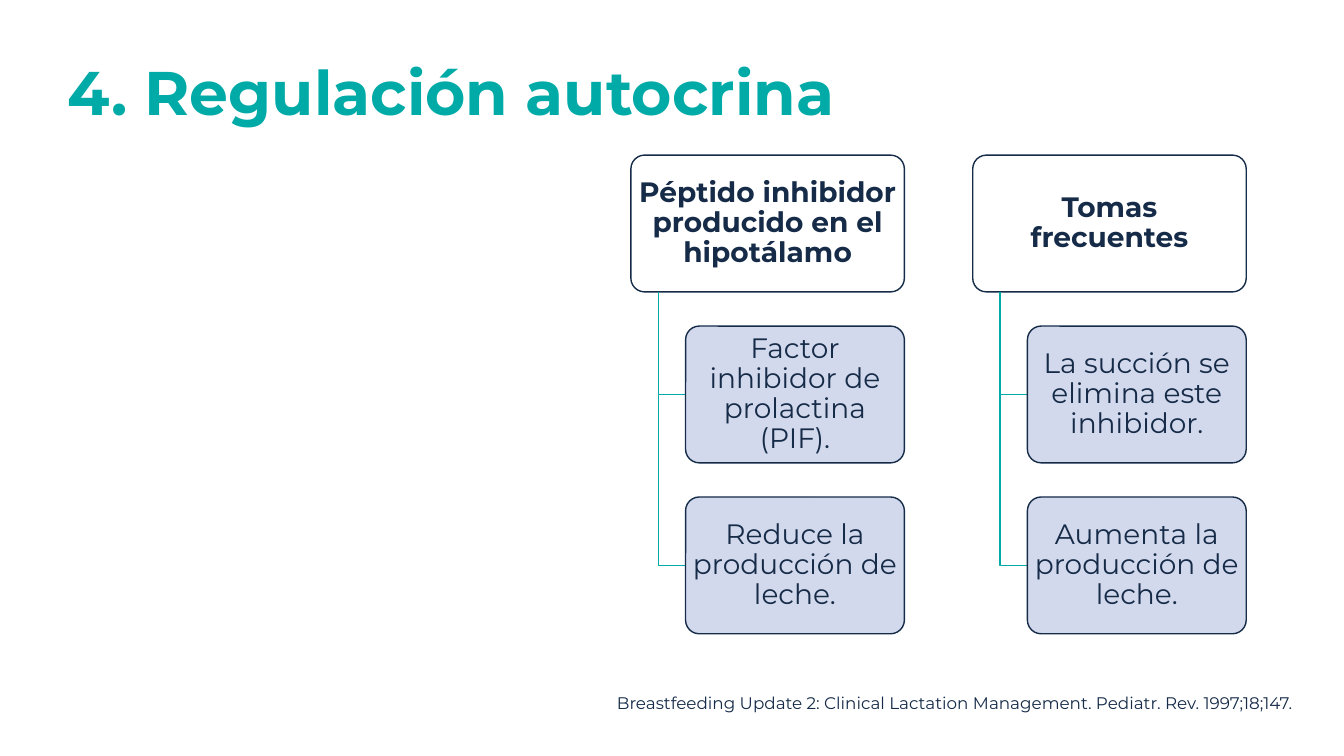
import pptx
import pptx.util
import pptx.dml.color
import pptx.enum.shapes
import pptx.enum.text
import pptx.oxml.ns
import lxml.etree

Cm = pptx.util.Cm
Pt = pptx.util.Pt
ALIGN = pptx.enum.text.PP_ALIGN
ANCHOR = pptx.enum.text.MSO_ANCHOR

TEAL, NAVY, WHITE, LAVENDER = "00AAA7", "152B48", "FFFFFF", "CFD5EA"

# Every length in the diagram is a multiple of the box height (cm).
LEFT, TOP, BOX_H = 15.9, 3.91, 3.446
HEAD_W = 2 * BOX_H
COLUMN_STEP = 2.5 * BOX_H
ROW_STEP = 1.25 * BOX_H
TRUNK_X = 0.2 * BOX_H
CHILD_X = 0.4 * BOX_H

COLUMNS = [
    ("Péptido inhibidor producido en el hipotálamo",
     ["Factor inhibidor de prolactina (PIF).", "Reduce la producción de leche."]),
    ("Tomas frecuentes",
     ["La succión se elimina este inhibidor.", "Aumenta la producción de leche."]),
]


def rgb(value):
    return pptx.dml.color.RGBColor.from_string(value)


def write(tf, text, size=20, color=NAVY, bold=False, align=ALIGN.LEFT,
          anchor=ANCHOR.TOP, spacing=1.0):
    tf.word_wrap = True
    tf.vertical_anchor = anchor
    p = tf.paragraphs[0]
    p.alignment = align
    p.line_spacing = spacing
    r = p.add_run()
    r.text = text
    r.font.name = "Montserrat"
    r.font.size = Pt(size)
    r.font.bold = bold
    r.font.color.rgb = rgb(color)


def add_text(s, x, y, w, h, text, **fmt):
    sp = s.shapes.add_textbox(Cm(x), Cm(y), Cm(w), Cm(h))
    write(sp.text_frame, text, **fmt)


def add_box(s, x, y, w, text, fill, opacity=100, bold=False):
    sp = s.shapes.add_shape(pptx.enum.shapes.MSO_SHAPE.ROUNDED_RECTANGLE,
                            Cm(x), Cm(y), Cm(w), Cm(BOX_H))
    sp.adjustments[0] = 0.1
    sp.shadow.inherit = False
    sp.fill.solid()
    sp.fill.fore_color.rgb = rgb(fill)
    if opacity < 100:
        qn = pptx.oxml.ns.qn
        clr = sp.fill._xPr.find(qn("a:solidFill")).find(qn("a:srgbClr"))
        lxml.etree.SubElement(clr, qn("a:alpha"), val=str(opacity * 1000))
    sp.line.color.rgb = rgb(NAVY)
    sp.line.width = Pt(1)
    tf = sp.text_frame
    tf.margin_left = tf.margin_right = Cm(0.06)
    tf.margin_top = tf.margin_bottom = Cm(0.07)
    write(tf, text, bold=bold, align=ALIGN.CENTER, anchor=ANCHOR.MIDDLE,
          spacing=0.9)


def add_elbow(s, x, y, end_x, end_y):
    """Draw a line down from (x, y) and then right to (end_x, end_y)."""
    builder = s.shapes.build_freeform(Cm(x), Cm(y))
    builder.add_line_segments([(Cm(x), Cm(end_y)), (Cm(end_x), Cm(end_y))],
                              close=False)
    sp = builder.convert_to_shape()
    sp.shadow.inherit = False
    sp.fill.background()
    sp.line.color.rgb = rgb("00ABA7")
    sp.line.width = Pt(1)


def add_column(s, x, heading, children):
    add_box(s, x, TOP, HEAD_W, heading, WHITE, bold=True)
    for row, text in enumerate(children, start=1):
        y = TOP + row * ROW_STEP
        add_elbow(s, x + TRUNK_X, TOP + BOX_H, x + CHILD_X, y + BOX_H / 2)
        add_box(s, x + CHILD_X, y, HEAD_W - CHILD_X, text, LAVENDER, opacity=90)


def main():
    prs = pptx.Presentation()
    prs.slide_width, prs.slide_height = Cm(33.87), Cm(19.05)
    s = prs.slides.add_slide(prs.slide_layouts[6])
    add_text(s, 1.45, 0.58, 29.21, 3.68, "4. Regulación autocrina", size=44,
             color=TEAL, bold=True, anchor=ANCHOR.MIDDLE, spacing=0.9)
    for i, (heading, children) in enumerate(COLUMNS):
        add_column(s, LEFT + i * COLUMN_STEP, heading, children)
    add_text(s, 15.09, 17.32, 17.75, 0.77,
             "Breastfeeding Update 2: Clinical Lactation Management. "
             "Pediatr. Rev. 1997;18;147.", size=12, align=ALIGN.RIGHT)
    prs.save("out.pptx")


if __name__ == "__main__":
    main()
